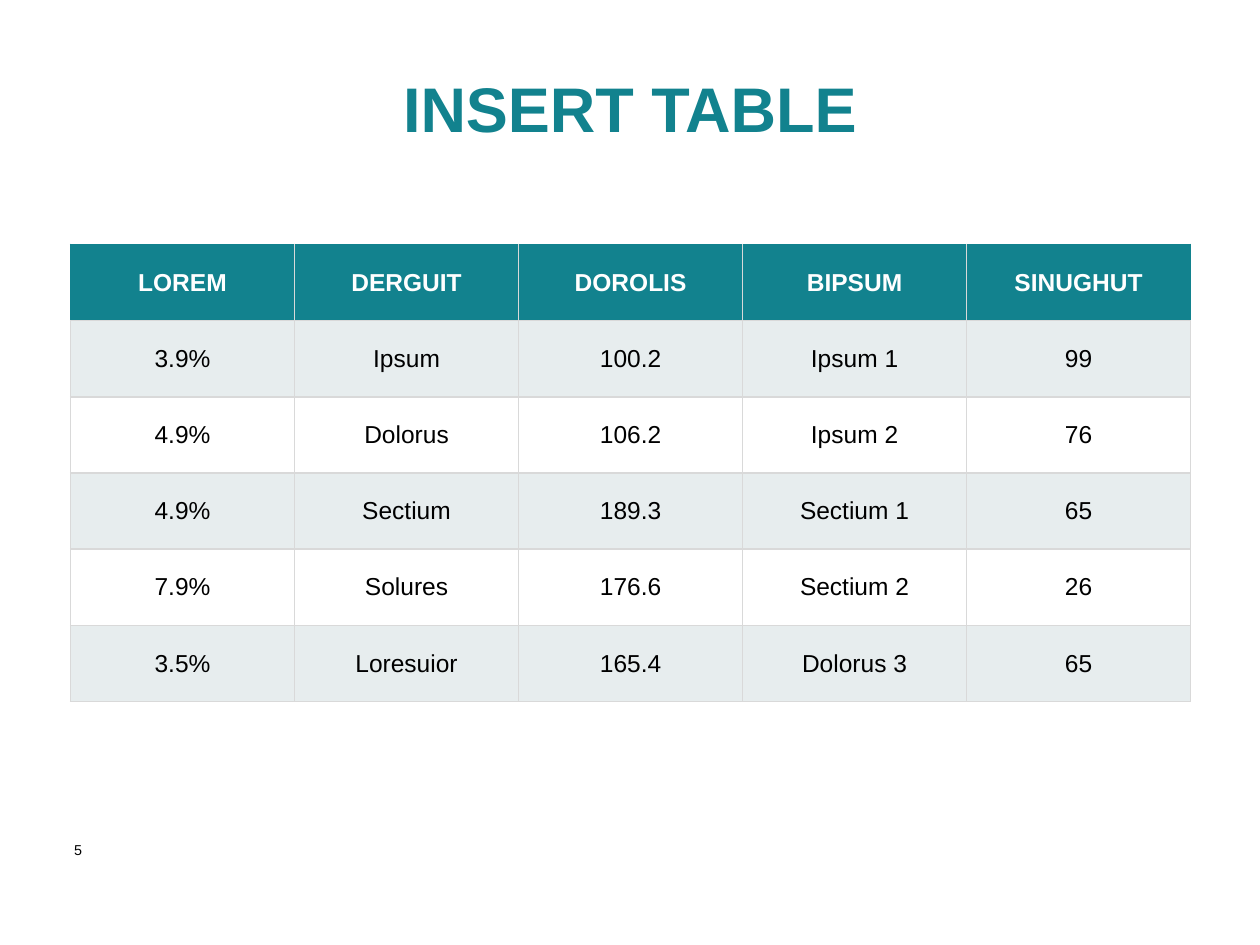
import pptx
import pptx.dml.color
import pptx.enum.text
import pptx.util
from lxml import etree
from pptx.oxml.ns import qn
from pptx.util import Inches

TEAL, GREY, BAND = "12828E", "D9D9D9", "E7EDEE"
WHITE, BLACK = "FFFFFF", "000000"
ALIGN = pptx.enum.text.PP_ALIGN
ANCHOR = pptx.enum.text.MSO_ANCHOR

ROWS = [
    ["LOREM", "DERGUIT", "DOROLIS", "BIPSUM", "SINUGHUT"],
    ["3.9%", "Ipsum", "100.2", "Ipsum 1", "99"],
    ["4.9%", "Dolorus", "106.2", "Ipsum 2", "76"],
    ["4.9%", "Sectium", "189.3", "Sectium 1", "65"],
    ["7.9%", "Solures", "176.6", "Sectium 2", "26"],
    ["3.5%", "Loresuior", "165.4", "Dolorus 3", "65"],
]


def rgb(value):
    return pptx.dml.color.RGBColor.from_string(value)


def write_text(tf, text, size, color, bold=False, align=ALIGN.CENTER):
    p = tf.paragraphs[0]
    p.alignment = align
    r = p.add_run()
    r.text = text
    font = {"name": "Arial", "size": pptx.util.Pt(size), "bold": bold}
    for key, value in font.items():
        setattr(r.font, key, value)
    r.font.color.rgb = rgb(color)


def add_text(s, box, text, anchor, **style):
    tf = s.shapes.add_textbox(*map(Inches, box)).text_frame
    tf.word_wrap = True
    tf.vertical_anchor = anchor
    write_text(tf, text, **style)


def set_borders(cell, colors):
    """Draw 1 pt borders; colors run left, right, top, bottom."""
    tcPr = cell._tc.get_or_add_tcPr()
    for i, (side, color) in enumerate(zip("LRTB", colors)):
        ln = etree.Element(qn(f"a:ln{side}"), w=str(pptx.util.Pt(1)))
        fill = etree.SubElement(ln, qn("a:solidFill"))
        etree.SubElement(fill, qn("a:srgbClr"), val=color)
        tcPr.insert(i, ln)


def format_cell(cell, text, header, fill):
    layout = {
        "vertical_anchor": ANCHOR.MIDDLE,
        "margin_left": Inches(0.08), "margin_right": Inches(0.08),
        "margin_top": Inches(0.04), "margin_bottom": Inches(0.04),
    }
    for key, value in layout.items():
        setattr(cell, key, value)
    cell.fill.solid()
    cell.fill.fore_color.rgb = rgb(fill)
    write_text(cell.text_frame, text, 14, WHITE if header else BLACK, header)


def add_data_table(s, rows, left, top, width, height):
    n_rows, n_cols = len(rows), len(rows[0])
    table = s.shapes.add_table(n_rows, n_cols, Inches(left), Inches(top),
                               Inches(width), Inches(height)).table
    for col in table.columns:
        col.width = Inches(width / n_cols)
    for row in table.rows:
        row.height = Inches(height / n_rows)
    for i, row in enumerate(rows):
        header = i == 0
        fill = TEAL if header else BAND if i % 2 else WHITE
        for j, text in enumerate(row):
            cell = table.cell(i, j)
            format_cell(cell, text, header, fill)
            # The header's outer edges take its own colour
            outer = (j == 0, j == n_cols - 1, True, False)
            set_borders(cell, [TEAL if header and edge else GREY
                               for edge in outer])


def main():
    prs = pptx.Presentation()
    prs.slide_width, prs.slide_height = Inches(10), Inches(7.5)
    s = prs.slides.add_slide(prs.slide_layouts[6])

    # Page number
    add_text(s, (0.49, 6.63, 0.43, 0.54), "5", ANCHOR.TOP,
             size=8.2, color=BLACK, align=ALIGN.LEFT)
    # Title
    add_text(s, (1.86, 0.52, 6.28, 0.67), "INSERT TABLE", ANCHOR.MIDDLE,
             size=36, color=TEAL, bold=True)
    # Table
    add_data_table(s, ROWS, 0.56, 1.94, 8.89, 3.63)

    prs.save("out.pptx")


if __name__ == "__main__":
    main()
